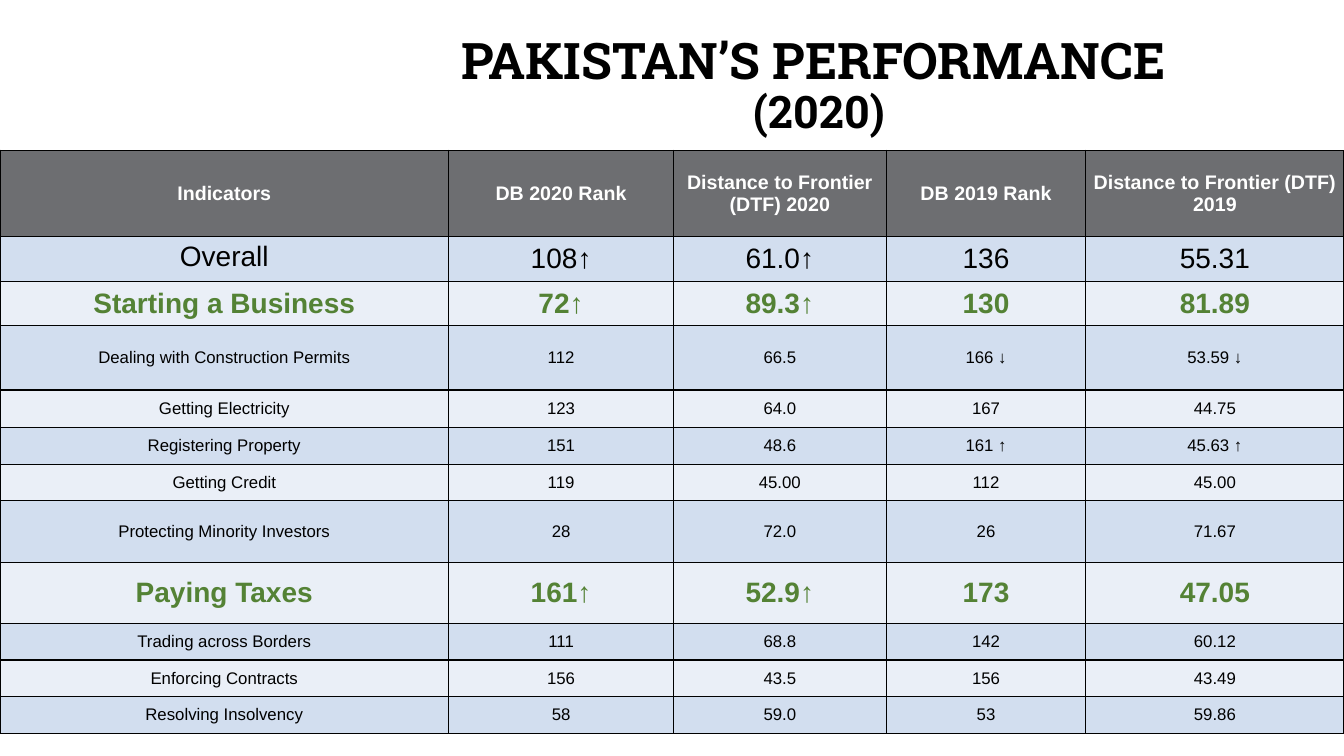
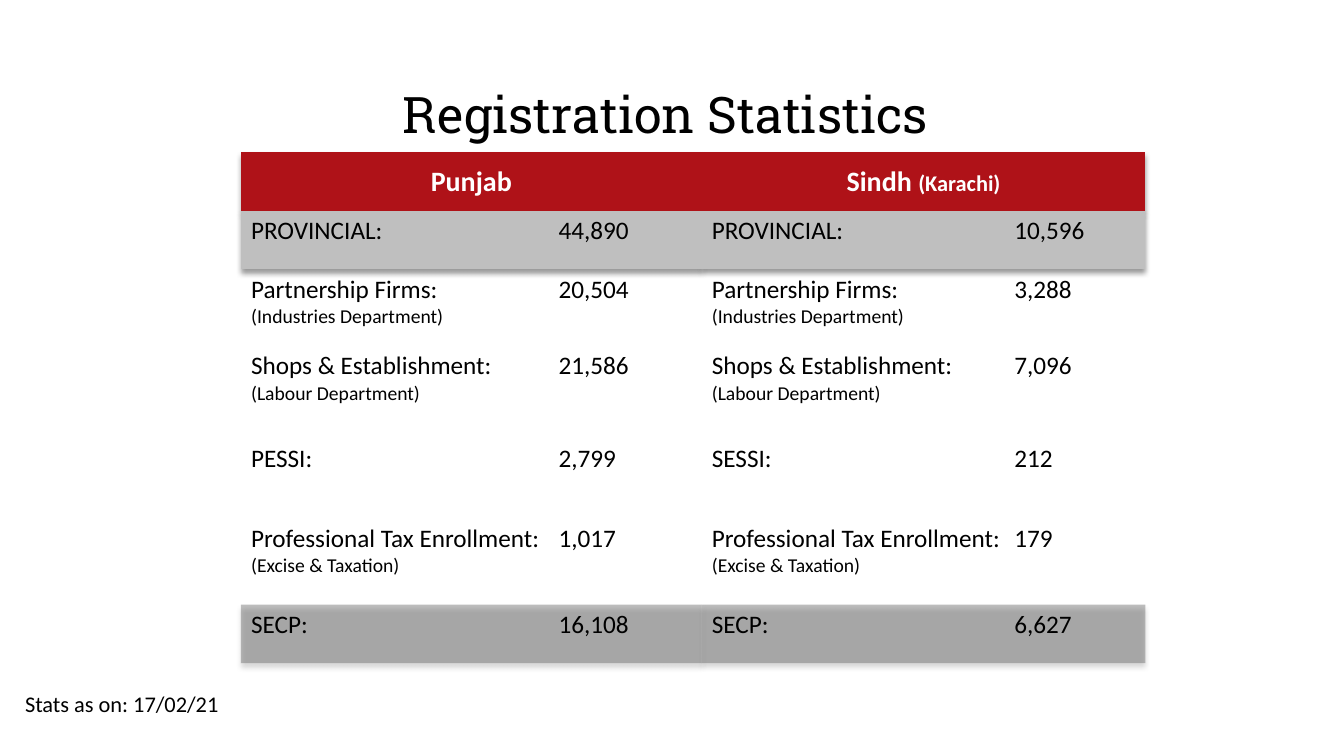
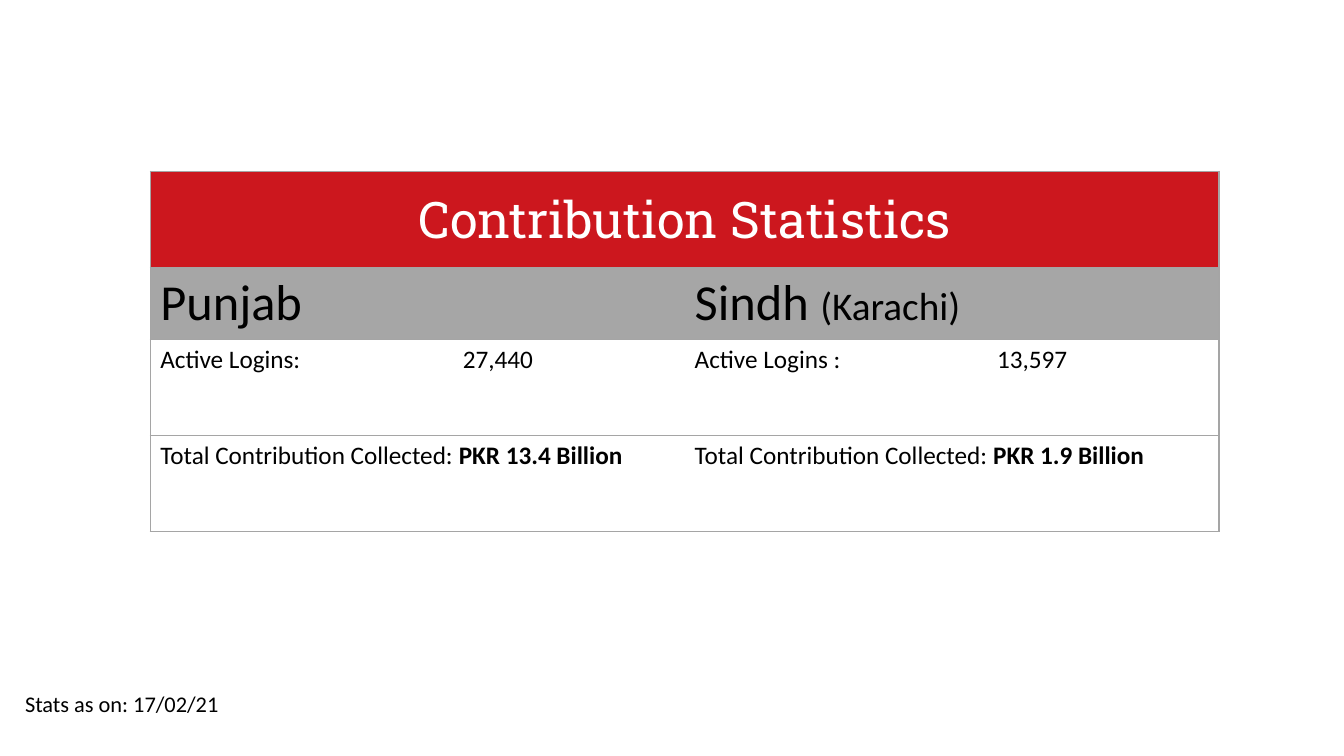
"""Build three slides on business rankings, registrations and contributions."""
from dataclasses import dataclass

from lxml import etree
from pptx import Presentation
from pptx.dml.color import RGBColor
from pptx.enum import text as t
from pptx.oxml import ns
from pptx.util import Inches, Pt


@dataclass(frozen=True)
class Theme:
    """Colours, fonts and type sizes shared by the slides."""
    black: str = "000000"
    white: str = "FFFFFF"
    green: str = "548235"
    slate: str = "6D6E71"
    bands: tuple = ("D2DEEF", "EAEFF7")
    dark_red: str = "AF1218"
    red: str = "CC171E"
    silver: str = "BFBFBF"
    grey: str = "A6A6A6"
    rule: str = "A5A5A5"
    charcoal: str = "595959"
    head_font: str = "Roboto Slab"
    body_font: str = "Calibri"
    rank_font: str = "Arial"
    title: int = 36
    subtitle: int = 32
    region_note: int = 28
    large: int = 20
    body: int = 18
    note: int = 16
    small: int = 14
    tiny: int = 12


TH = Theme()
NO_STYLE = "{2D5ABB26-0587-4C30-8999-92F81FD0307C}"
CENTER = t.PP_ALIGN.CENTER
MIDDLE = t.MSO_ANCHOR.MIDDLE
TOP = t.MSO_ANCHOR.TOP

RANK_COLS = [4.45, 2.23, 2.11, 1.98, 2.56]
RANK_STYLES = {
    "head": dict(size=TH.small, color=TH.white, bold=True),
    "overall": dict(size=TH.large, color=TH.black, bold=False),
    "key": dict(size=TH.large, color=TH.green, bold=True),
    "plain": dict(size=TH.tiny, color=TH.black, bold=False),
}
UP = ("↑", dict(bold=True))
RANK_ROWS = [
    (0.86, "head", ["Indicators", "DB 2020 Rank", "Distance to Frontier (DTF) 2020",
                    "DB 2019 Rank", "Distance to Frontier (DTF) 2019"]),
    (0.44, "overall", ["Overall", ["108", UP], ["61.0", UP], "136", "55.31"]),
    (0.44, "key", ["Starting a Business", "72↑", "89.3↑", "130", "81.89"]),
    (0.64, "plain", ["Dealing with Construction Permits", "112", "66.5", "166 ↓", "53.59 ↓"]),
    (0.37, "plain", ["Getting Electricity", "123", "64.0", "167", "44.75"]),
    (0.37, "plain", ["Registering Property", "151", "48.6", "161 ↑", "45.63 ↑"]),
    (0.36, "plain", ["Getting Credit", "119", "45.00", "112", "45.00"]),
    (0.61, "plain", ["Protecting Minority Investors", "28", "72.0", "26", "71.67"]),
    (0.61, "key", ["Paying Taxes", "161↑", "52.9↑", "173", "47.05"]),
    (0.36, "plain", ["Trading across Borders", "111", "68.8", "142", "60.12"]),
    (0.36, "plain", ["Enforcing Contracts", "156", "43.5", "156", "43.49"]),
    (0.37, "plain", ["Resolving Insolvency", "58", "59.0", "53", "59.86"]),
]

REG_COLS = [4.57, 4.4]
REG_STOPS = [3.05, 3]
REG_HEAD = ["Punjab", ["Sindh ", ("(Karachi)", dict(size=TH.note))]]
REG_HEAD_HEIGHT = 0.58
REG_ROWS = [
    (0.58, ["PROVINCIAL:\t44,890", "PROVINCIAL:\t10,596"], None, (TH.silver, None)),
    (0.76, ["Partnership Firms:\t20,504", "Partnership Firms:\t3,288"],
     "(Industries Department)", None),
    (0.92, ["Shops & Establishment:\t21,586", "Shops & Establishment:\t7,096"],
     "(Labour Department)", None),
    (0.79, ["PESSI:\t2,799", "SESSI:\t212"], None, None),
    (0.86, ["Professional Tax Enrollment:\t1,017", "Professional Tax Enrollment:\t179"],
     "(Excise & Taxation)", None),
    (0.58, ["SECP:\t16,108", "SECP:\t6,627"], None, (TH.charcoal, 39)),
]

CONTRIB_COLS = [5.3, 5.3]
CONTRIB_HEIGHTS = [0.95, 0.72, 0.95, 0.95]
CONTRIB_TITLE = "Contribution Statistics"
CONTRIB_REGIONS = ["Punjab", ["Sindh ", ("(Karachi)", dict(size=TH.region_note))]]
STRONG = dict(bold=True)
CONTRIB_ROWS = [
    ["Active Logins:\t27,440", "Active Logins :\t13,597"],
    [["Total Contribution Collected: ", ("PKR 13.4 Billion", STRONG)],
     ["Total Contribution Collected: ", ("PKR 1.9 Billion", STRONG)]],
]
STATS_DATE = "Stats as on: 17/02/21"


def style_font(font, name=None, size=None, color=None, bold=None):
    """Apply the given font properties."""
    if name:
        font.name = name
    if size:
        font.size = Pt(size)
    if color:
        font.color.rgb = RGBColor.from_string(color)
    if bold is not None:
        font.bold = bold


def write(p, content, align=None, stop=None, **font):
    """Write a string or a list of runs; a leading newline breaks the line."""
    p.alignment = align
    if stop:
        tabs = etree.SubElement(p._p.get_or_add_pPr(), ns.qn("a:tabLst"))
        etree.SubElement(tabs, ns.qn("a:tab"), pos=str(Inches(stop)), algn="l")
    style_font(p.font, **font)
    for item in [content] if isinstance(content, str) else content:
        text, extra = (item, {}) if isinstance(item, str) else item
        if text.startswith("\n"):
            p.add_line_break()
        r = p.add_run()
        r.text = text.lstrip("\n")
        style_font(r.font, **extra)


def add_title(s, box, content, **font):
    """Place and fill the title placeholder."""
    sp = s.shapes.title
    sp.left, sp.top, sp.width, sp.height = map(Inches, box)
    tf = sp.text_frame
    tf.auto_size = t.MSO_AUTO_SIZE.NONE
    tf.word_wrap = True
    tf.vertical_anchor = MIDDLE
    p = tf.paragraphs[0]
    p.line_spacing = 0.9
    write(p, content, CENTER, name=TH.head_font, size=TH.title, color=TH.black, **font)


def add_grid(s, left, top, cols, heights):
    """Add an unstyled table with the given column widths and row heights."""
    frame = s.shapes.add_table(len(heights), len(cols), Inches(left), Inches(top),
                               Inches(sum(cols)), Inches(sum(heights)))
    table = frame.table
    table.first_row = table.horz_banding = False
    table._tbl.tblPr.find(ns.qn("a:tableStyleId")).text = NO_STYLE
    for col, width in zip(table.columns, cols):
        col.width = Inches(width)
    for row, height in zip(table.rows, heights):
        row.height = Inches(height)
    return table


def fill_cell(cell, content, fill=None, alpha=None, anchor=TOP, sides="", rule=None, **para):
    """Set the text, borders and fill of a cell."""
    cell.vertical_anchor = anchor
    write(cell.text_frame.paragraphs[0], content, **para)
    pr = cell._tc.get_or_add_tcPr()
    for side in sides:
        ln = etree.SubElement(pr, ns.qn(f"a:ln{side}"), w=str(Pt(1)))
        solid = etree.SubElement(ln, ns.qn("a:solidFill"))
        etree.SubElement(solid, ns.qn("a:srgbClr"), val=rule)
    if not fill:
        cell.fill.background()
        return
    cell.fill.solid()
    cell.fill.fore_color.rgb = RGBColor.from_string(fill)
    if alpha:
        clr = pr.find(".//" + ns.qn("a:solidFill") + "/" + ns.qn("a:srgbClr"))
        etree.SubElement(clr, ns.qn("a:alpha"), val=str(alpha * 1000))


def add_table_shadow(table):
    """Give the table a soft shadow below."""
    effects = etree.Element(ns.qn("a:effectLst"))
    shadow = etree.SubElement(effects, ns.qn("a:outerShdw"), blurRad=str(Pt(4)),
                              dist=str(Pt(3)), dir="5400000", algn="t", rotWithShape="0")
    clr = etree.SubElement(shadow, ns.qn("a:srgbClr"), val=TH.black)
    etree.SubElement(clr, ns.qn("a:alpha"), val="40000")
    table._tbl.tblPr.insert(0, effects)


def add_date(s):
    """Add the date of the statistics at the bottom left."""
    sp = s.shapes.add_textbox(Inches(0.15), Inches(6.8), Inches(4.49), Inches(0.37))
    tf = sp.text_frame
    tf.word_wrap = True
    tf.auto_size = t.MSO_AUTO_SIZE.SHAPE_TO_FIT_TEXT
    write(tf.paragraphs[0], STATS_DATE, name=TH.body_font, size=TH.note, color=TH.black)


def build_ranking(s):
    """Build the ranking slide."""
    add_title(s, (2.54, 0.24, 11.18, 1.25),
              ["PAKISTAN’S PERFORMANCE ", ("\n(2020)", dict(size=TH.subtitle))], bold=True)
    table = add_grid(s, 0, 1.49, RANK_COLS, [row[0] for row in RANK_ROWS])
    for i, (_, style, values) in enumerate(RANK_ROWS):
        fill = TH.bands[(i - 1) % 2] if i else TH.slate
        for j, value in enumerate(values):
            cell = table.cell(i, j)
            cell.margin_left = cell.margin_right = Inches(0.07)
            cell.margin_top = cell.margin_bottom = Inches(0.04)
            fill_cell(cell, value, fill, anchor=TOP if value == "Overall" else MIDDLE,
                      sides="LRTB", rule=TH.black, align=CENTER, name=TH.rank_font,
                      **RANK_STYLES[style])


def build_registration(s):
    """Build the registration slide."""
    add_title(s, (2.39, 0.8, 8.42, 0.72), "Registration Statistics")
    table = add_grid(s, 2.39, 1.51, REG_COLS, [REG_HEAD_HEIGHT] + [row[0] for row in REG_ROWS])
    add_table_shadow(table)
    for j, region in enumerate(REG_HEAD):
        fill_cell(table.cell(0, j), region, TH.dark_red, anchor=MIDDLE, align=CENTER,
                  name=TH.body_font, size=TH.large, color=TH.white, bold=True)
    for i, (_, entries, office, shade) in enumerate(REG_ROWS, 1):
        fill, alpha = shade or (None, None)
        for j, entry in enumerate(entries):
            content = [entry, ("\n" + office, dict(size=TH.small))] if office else entry
            fill_cell(table.cell(i, j), content, fill, alpha, stop=REG_STOPS[j],
                      name=TH.body_font, size=TH.body, color=TH.black)
    add_date(s)


def build_contribution(s):
    """Build the contribution slide."""
    table = add_grid(s, 1.49, 1.7, CONTRIB_COLS, CONTRIB_HEIGHTS)
    table.cell(0, 0).merge(table.cell(0, 1))
    fill_cell(table.cell(0, 0), CONTRIB_TITLE, TH.red, anchor=MIDDLE, sides="LRTB",
              rule=TH.rule, align=CENTER, name=TH.head_font, size=TH.title, color=TH.white)
    body = dict(rule=TH.rule, name=TH.body_font, color=TH.black)
    for j, sides in enumerate(("LTB", "RTB")):
        fill_cell(table.cell(1, j), CONTRIB_REGIONS[j], TH.grey, anchor=MIDDLE,
                  sides=sides, size=TH.title, **body)
        for i, row in enumerate(CONTRIB_ROWS, 2):
            stop = 3 if isinstance(row[j], str) else None
            fill_cell(table.cell(i, j), row[j], sides=sides, stop=stop, size=TH.body, **body)
    add_date(s)


def main():
    """Create and save the presentation."""
    prs = Presentation()
    prs.slide_width, prs.slide_height = Inches(13.33), Inches(7.5)
    for build, layout in ((build_ranking, 5), (build_registration, 5), (build_contribution, 6)):
        build(prs.slides.add_slide(prs.slide_layouts[layout]))
    prs.save("out.pptx")


if __name__ == "__main__":
    main()
